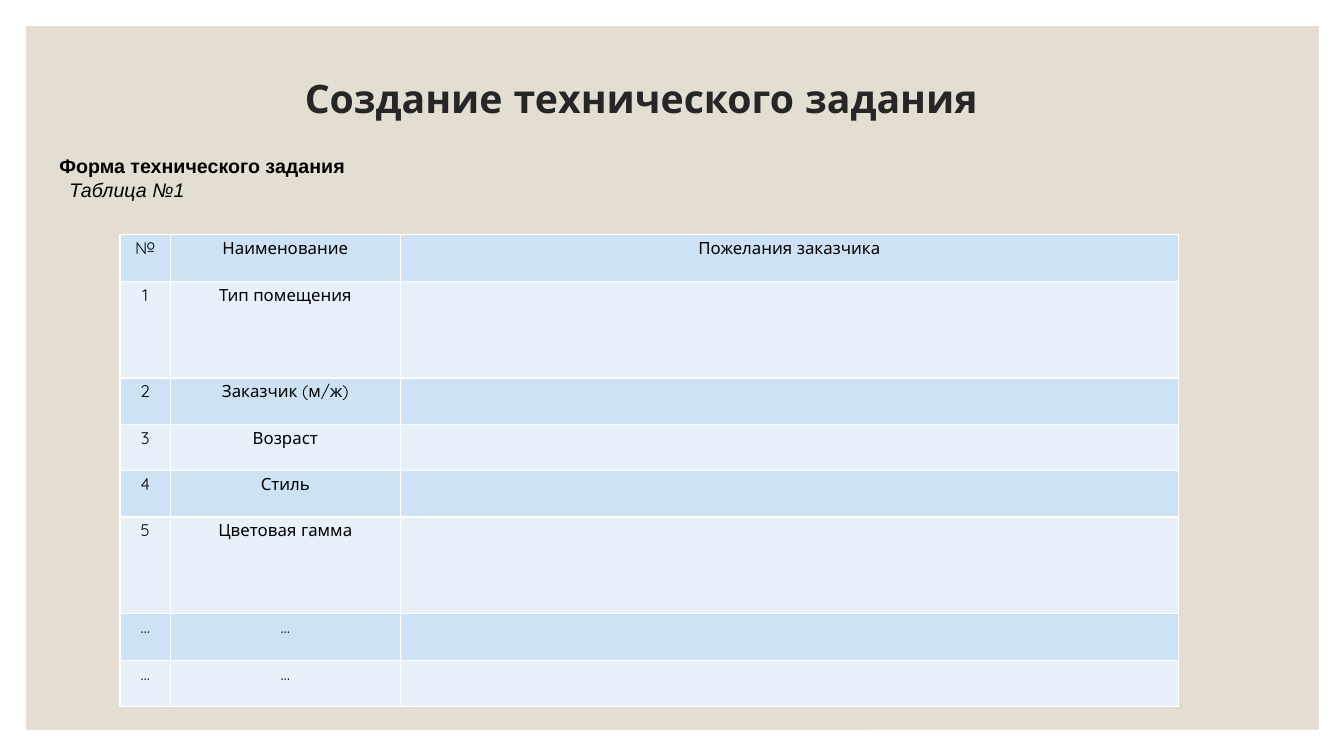
import lxml.etree
import pptx
import pptx.dml.color
import pptx.enum.shapes
import pptx.enum.text
import pptx.oxml.ns
import pptx.util

Inches = pptx.util.Inches
Align = pptx.enum.text.PP_ALIGN
Anchor = pptx.enum.text.MSO_ANCHOR
qn = pptx.oxml.ns.qn


def tint(code):
    return pptx.dml.color.RGBColor.from_string(code)


def write(para, text, font, size, color="000000", **style):
    run = para.add_run()
    run.text = text
    run.font.color.rgb = tint(color)
    look = {"name": font, "size": pptx.util.Pt(size), **style}
    for key, value in look.items():
        setattr(run.font, key, value)


deck = pptx.Presentation()
deck.slide_width, deck.slide_height = Inches(13.33), Inches(7.5)
slide = deck.slides.add_slide(deck.slide_layouts[6])
shapes = slide.shapes

# Beige panels
for width in (12.82, 8.37):
    panel = shapes.add_shape(pptx.enum.shapes.MSO_SHAPE.RECTANGLE,
                             Inches(0.26), Inches(0.26), Inches(width), Inches(6.98))
    panel.shadow.inherit = False
    panel.fill.solid()
    panel.fill.fore_color.rgb = tint("E3DED1")
    panel.line.fill.background()

# Title
title = shapes.add_textbox(Inches(0.68), Inches(0.52), Inches(11.36), Inches(0.95))
frame = title.text_frame
frame.word_wrap = True
frame.vertical_anchor = Anchor.MIDDLE
para = frame.paragraphs[0]
para.alignment = Align.CENTER
para.line_spacing = 0.9
write(para, "Создание технического задания", "Quicksand", 28, "262626", bold=True)

# Table
rows = [
    ("№", "Наименование", "Пожелания заказчика"),
    ("1", "Тип помещения", ""),
    ("2", "Заказчик (м/ж)", ""),
    ("3", "Возраст", ""),
    ("4", "Стиль", ""),
    ("5", "Цветовая гамма", ""),
    ("…", "…", ""),
    ("…", "…", ""),
]
tall = (1, 5)
bands = ("CDE3F5", "E8F1FA")
inset = {"margin_left": Inches(0.07), "margin_right": Inches(0.07),
         "margin_top": 0, "margin_bottom": 0}

table = shapes.add_table(len(rows), 3, Inches(1.19), Inches(2.33),
                         Inches(10.5), Inches(4.65)).table
for col, width in zip(table.columns, (0.5, 2.28, 7.72)):
    col.width = Inches(width)

for r, row in enumerate(rows):
    table.rows[r].height = Inches(0.96 if r in tall else 0.46)
    for c, text in enumerate(row):
        cell = table.cell(r, c)
        for key, value in inset.items():
            setattr(cell, key, value)
        # White borders come before the fill
        props = cell._tc.get_or_add_tcPr()
        for side in ("a:lnL", "a:lnR", "a:lnT", "a:lnB"):
            line = lxml.etree.SubElement(props, qn(side), w="12700")
            solid = lxml.etree.SubElement(line, qn("a:solidFill"))
            lxml.etree.SubElement(solid, qn("a:srgbClr"), val="FFFFFF")
        cell.fill.solid()
        cell.fill.fore_color.rgb = tint(bands[r % 2])
        if text:
            para = cell.text_frame.paragraphs[0]
            para.alignment = Align.CENTER
            para.line_spacing = 1.15
            write(para, text, "Quicksand", 12)

# Table caption
label = shapes.add_textbox(0, Inches(1.48), Inches(13.33), Inches(0.58))
frame = label.text_frame
frame.word_wrap = True
lines = [
    ("Форма технического задания", 0.49, {"bold": True}),
    ("Таблица №1", 0.59, {"italic": True}),
]
for i, (text, indent, style) in enumerate(lines):
    para = frame.add_paragraph() if i else frame.paragraphs[0]
    para._p.get_or_add_pPr().set("indent", str(Inches(indent)))
    write(para, text, "Arial", 14, **style)

deck.save("out.pptx")
